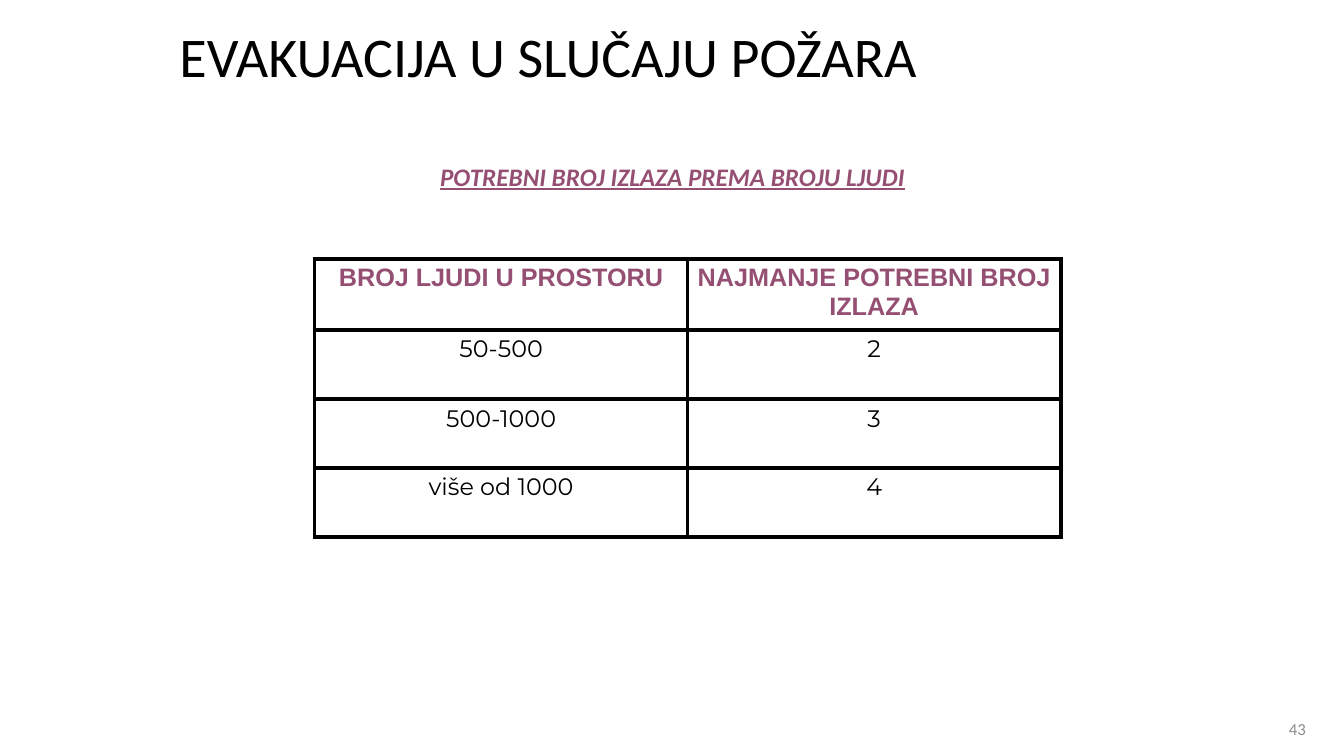
from dataclasses import dataclass

from lxml import etree
from pptx import Presentation
from pptx.dml.color import RGBColor
from pptx.enum.text import MSO_ANCHOR, MSO_AUTO_SIZE, PP_ALIGN
from pptx.oxml.ns import qn
from pptx.util import Pt

LEFT, CENTER, RIGHT = PP_ALIGN.LEFT, PP_ALIGN.CENTER, PP_ALIGN.RIGHT
TOP, MIDDLE = MSO_ANCHOR.TOP, MSO_ANCHOR.MIDDLE
NO_AUTOFIT = MSO_AUTO_SIZE.NONE
TITLE_ONLY = 5
PX = 9144  # 100 px to the inch


@dataclass(frozen=True)
class TextStyle:
    font: str
    size: int
    color: str
    bold: bool = False
    italic: bool = False
    underline: bool = False


@dataclass(frozen=True)
class Theme:
    border: str = "000000"
    border_width: int = 3
    title: TextStyle = TextStyle("Calibri", 40, "000000")
    subtitle: TextStyle = TextStyle("Calibri", 18, "954F72", True, True, True)
    header: TextStyle = TextStyle("Arial", 18, "954F72", True)
    body: TextStyle = TextStyle("Montserrat", 17, "000000")
    number: TextStyle = TextStyle("Calibri", 12, "8C8C8C")


class Deck:
    def __init__(self, width, height, theme):
        self.theme = theme
        self.prs = Presentation()
        self.prs.slide_width, self.prs.slide_height = width * PX, height * PX
        self.s = self.prs.slides.add_slide(self.prs.slide_layouts[TITLE_ONLY])

    def set_text(self, tf, text, style, align):
        tf.text = text
        tf.word_wrap = True
        p = tf.paragraphs[0]
        p.alignment = align
        font = p.runs[0].font
        font.name, font.size = style.font, Pt(style.size)
        font.bold, font.italic, font.underline = style.bold, style.italic, style.underline
        font.color.rgb = RGBColor.from_string(style.color)
        return p

    def title(self, text, x, y, w, h):
        sp = self.s.shapes.title
        sp.left, sp.top, sp.width, sp.height = (v * PX for v in (x, y, w, h))
        tf = sp.text_frame
        p = self.set_text(tf, text, self.theme.title, LEFT)
        p.line_spacing = 0.9
        tf.auto_size, tf.vertical_anchor = NO_AUTOFIT, MIDDLE

    def text(self, text, x, y, w, h, style, align, anchor=TOP):
        sp = self.s.shapes.add_textbox(x * PX, y * PX, w * PX, h * PX)
        self.set_text(sp.text_frame, text, style, align)
        sp.text_frame.vertical_anchor = anchor

    def borders(self, cell):
        tc_pr = cell._tc.get_or_add_tcPr()
        for i, side in enumerate(("lnL", "lnR", "lnT", "lnB")):
            ln = etree.Element(qn(f"a:{side}"), w=str(Pt(self.theme.border_width)))
            fill = etree.SubElement(ln, qn("a:solidFill"))
            etree.SubElement(fill, qn("a:srgbClr"), val=self.theme.border)
            tc_pr.insert(i, ln)

    def table(self, rows, x, y, w, heights):
        columns = len(rows[0])
        frame = self.s.shapes.add_table(
            len(rows), columns, x * PX, y * PX, w * PX, sum(heights) * PX)
        table = frame.table
        table.horz_banding = False
        for column in table.columns:
            column.width = w * PX // columns
        for i, (values, height) in enumerate(zip(rows, heights)):
            table.rows[i].height = height * PX
            style = self.theme.body if i else self.theme.header
            for j, value in enumerate(values):
                cell = table.cell(i, j)
                cell.fill.background()
                cell.margin_left = cell.margin_right = 8 * PX
                self.set_text(cell.text_frame, value, style, CENTER)
                self.borders(cell)


def main():
    theme = Theme()
    deck = Deck(1333, 750, theme)

    # Headings
    deck.title("EVAKUACIJA U SLUČAJU POŽARA", 168, 21, 1136, 76)
    deck.text("POTREBNI BROJ IZLAZA PREMA BROJU LJUDI", 210, 155, 914, 40,
              theme.subtitle, CENTER)

    # Required exits by number of people
    exits = [
        ("BROJ LJUDI U PROSTORU", "NAJMANJE POTREBNI BROJ IZLAZA"),
        ("50-500", "2"),
        ("500-1000", "3"),
        ("više od 1000", "4"),
    ]
    deck.table(exits, 312, 257, 740, (70, 69, 68, 69))

    # Slide number
    deck.text("43", 1234, 706, 71, 35, theme.number, RIGHT, MIDDLE)

    deck.prs.save("out.pptx")


if __name__ == "__main__":
    main()
